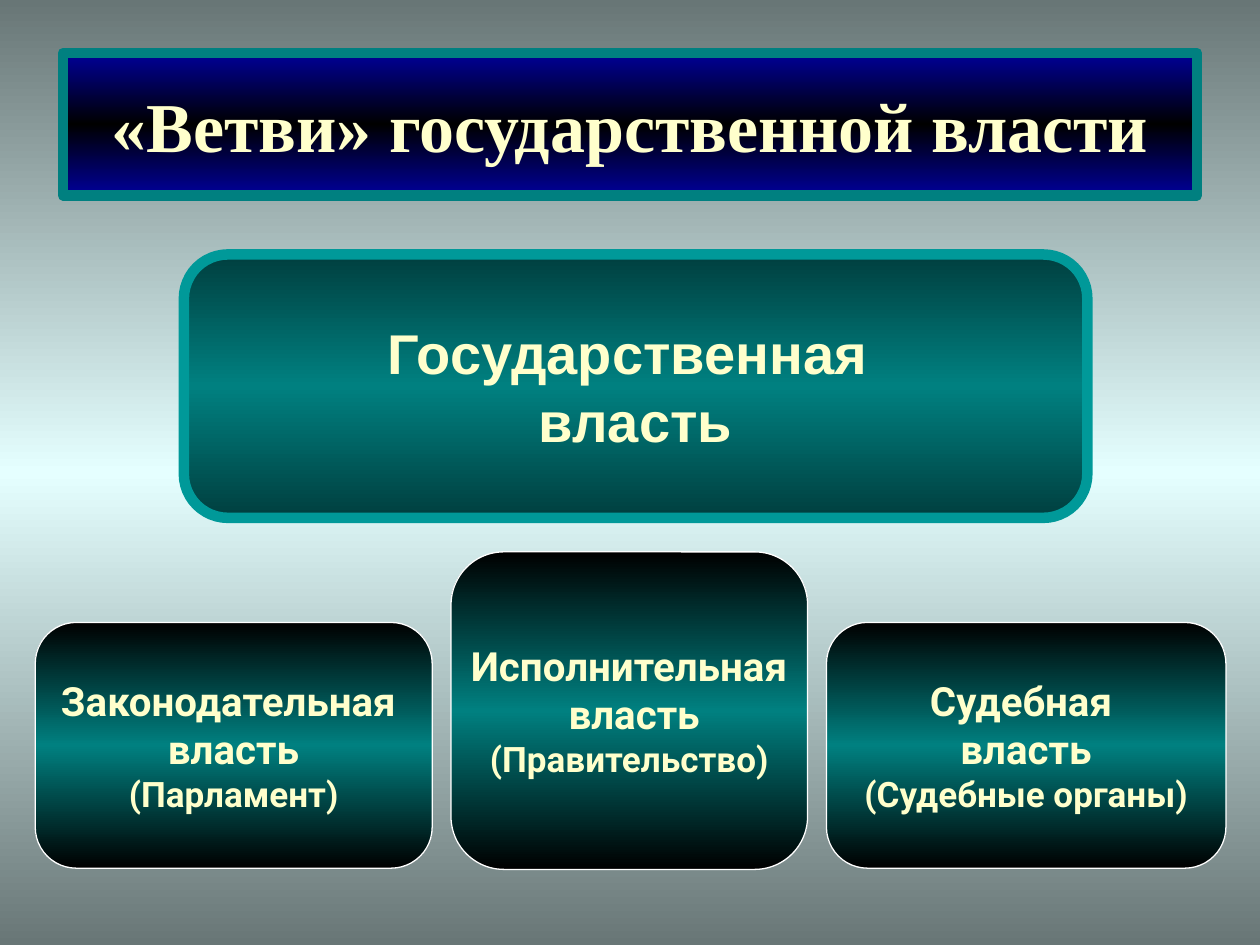
"""Build a slide showing the branches of state power."""
from copy import deepcopy

from pptx import Presentation
from pptx.dml.color import RGBColor
from pptx.enum.shapes import MSO_SHAPE
from pptx.enum.text import MSO_ANCHOR, PP_ALIGN
from pptx.oxml.ns import qn
from pptx.util import Inches, Pt

GRAY = RGBColor(0x68, 0x76, 0x76)
ICE = RGBColor(0xE5, 0xFF, 0xFF)
NAVY = RGBColor(0x00, 0x00, 0x99)
BLACK = RGBColor(0x00, 0x00, 0x00)
TEAL = RGBColor(0x00, 0x80, 0x80)
DEEP = RGBColor(0x00, 0x3F, 0x3F)
AQUA = RGBColor(0x00, 0x99, 0x99)
WHITE = RGBColor(0xFF, 0xFF, 0xFF)
CREAM = RGBColor(0xFF, 0xFF, 0xCC)


def blend(owner, fill, edge, core):
    fill.gradient()
    fill.gradient_angle = 90
    stops = owner.element.find(".//" + qn("a:gsLst"))
    stops.append(deepcopy(stops[0]))
    for stop, pos, tone in zip(fill.gradient_stops, (0, 0.5, 1), (edge, core, edge)):
        stop.position = pos
        stop.color.rgb = tone


deck = Presentation()
deck.slide_width, deck.slide_height = Inches(10), Inches(7.5)
col, row = deck.slide_width / 100, deck.slide_height / 100
slide = deck.slides.add_slide(deck.slide_layouts[6])
blend(slide, slide.background.fill, GRAY, ICE)

RECT, ROUND = MSO_SHAPE.RECTANGLE, MSO_SHAPE.ROUNDED_RECTANGLE
title = {"kind": RECT, "edge": NAVY, "core": BLACK, "line": TEAL, "width": 6,
         "font": "Times New Roman", "sizes": (40,)}
power = {"kind": ROUND, "edge": DEEP, "core": TEAL, "line": AQUA, "width": 6,
         "font": "Arial", "sizes": (32, 32)}
branch = {"kind": ROUND, "edge": BLACK, "core": TEAL, "line": WHITE, "width": 0.75,
          "font": "Roboto", "sizes": (23, 23, 20)}
frame = {"margin_left": 0, "margin_right": 0, "margin_top": 0, "margin_bottom": 0,
         "word_wrap": False, "vertical_anchor": MSO_ANCHOR.MIDDLE}

boxes = [
    (title, 5, 5.6, 90, 15.07, ["«Ветви» государственной власти"]),
    (power, 14.6, 26.93, 71.7, 27.87, ["Государственная ", "власть"]),
    (branch, 2.8, 65.87, 31.5, 26, ["Законодательная ", "власть", "(Парламент)"]),
    (branch, 35.8, 58.4, 28.3, 33.6, ["Исполнительная", " власть", "(Правительство)"]),
    (branch, 65.6, 65.87, 31.7, 26, ["Судебная ", "власть", "(Судебные органы)"]),
]

for style, left, top, wide, high, lines in boxes:
    box = slide.shapes.add_shape(
        style["kind"], int(left * col), int(top * row), int(wide * col), int(high * row))
    box.shadow.inherit = False
    blend(box, box.fill, style["edge"], style["core"])
    box.line.color.rgb = style["line"]
    box.line.width = Pt(style["width"])
    text = box.text_frame
    for name, value in frame.items():
        setattr(text, name, value)
    text.text = "\n".join(lines)
    for para, size in zip(text.paragraphs, style["sizes"]):
        para.alignment = PP_ALIGN.CENTER
        font = para.runs[0].font
        font.color.rgb = CREAM
        for name, value in {"name": style["font"], "size": Pt(size), "bold": True}.items():
            setattr(font, name, value)

deck.save("out.pptx")
